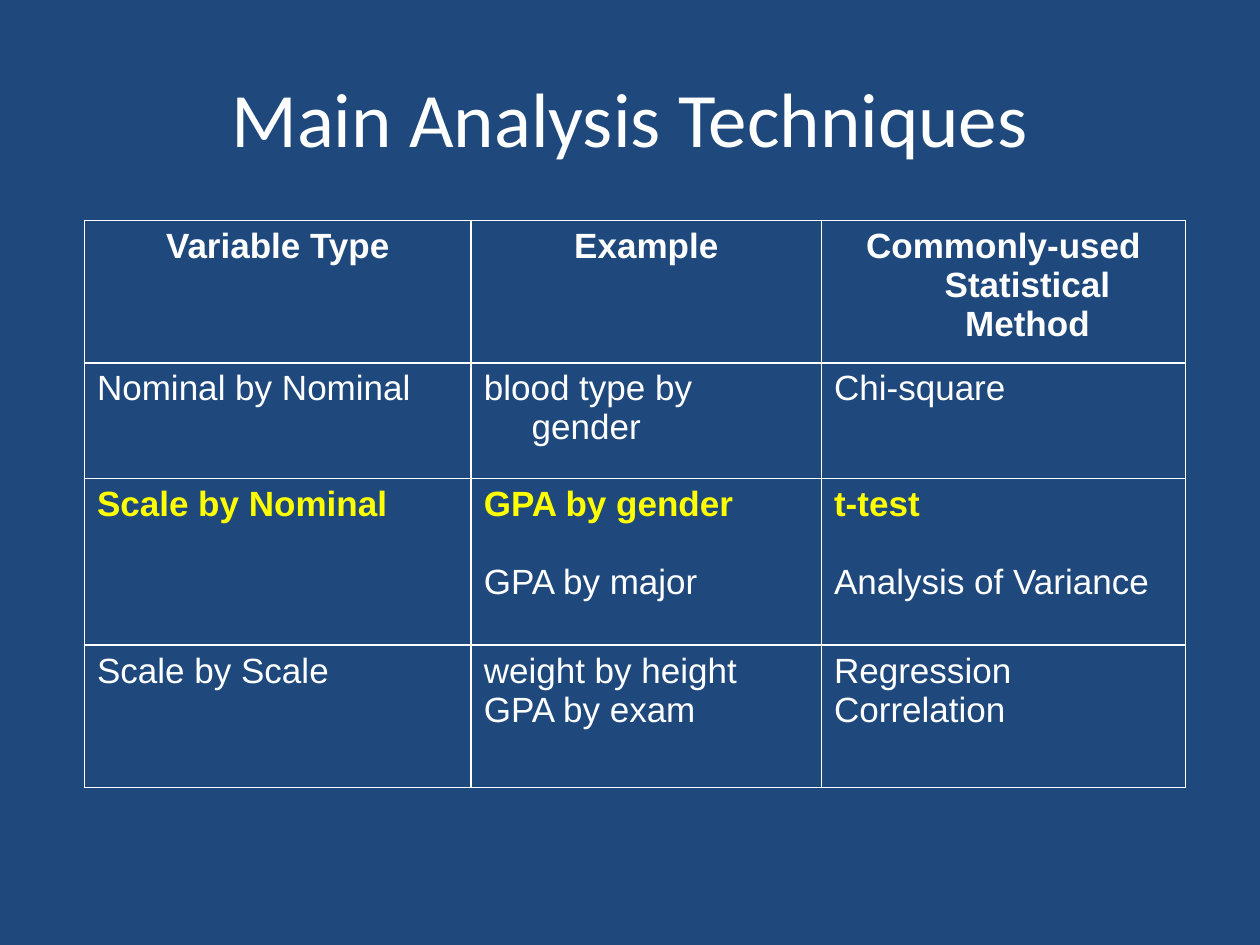
from dataclasses import dataclass

from lxml.etree import SubElement
from pptx import Presentation
from pptx.dml.color import RGBColor
from pptx.enum.text import MSO_ANCHOR, PP_ALIGN
from pptx.oxml.ns import qn
from pptx.util import Inches, Pt


@dataclass(frozen=True)
class Theme:
    background: RGBColor = RGBColor(0x1F, 0x49, 0x7D)
    text: RGBColor = RGBColor(0xFF, 0xFF, 0xFF)
    highlight: RGBColor = RGBColor(0xFF, 0xFF, 0x00)
    title_font: str = "Calibri"
    table_font: str = "Arial"
    title_size: Pt = Pt(44)
    table_size: Pt = Pt(20)
    paragraph_gap: Pt = Pt(22)
    border: Pt = Pt(1)


@dataclass(frozen=True)
class Line:
    text: str
    header: bool = False
    highlight: bool = False
    gap: bool = False


THEME = Theme()
COLUMN_WIDTHS = (3.07, 2.78, 2.89)
ROW_HEIGHTS = (1.13, 0.92, 1.32, 1.13)
ROWS = (
    tuple((Line(text, header=True),) for text in
          ("Variable Type", "Example", "Commonly-used Statistical Method")),
    ((Line("Nominal by Nominal"),), (Line("blood type by gender"),), (Line("Chi-square"),)),
    (
        (Line("Scale by Nominal", highlight=True),),
        (Line("GPA by gender", highlight=True), Line("GPA by major", gap=True)),
        (Line("t-test", highlight=True), Line("Analysis of Variance", gap=True)),
    ),
    (
        (Line("Scale by Scale"),),
        (Line("weight by height"), Line("GPA by exam")),
        (Line("Regression"), Line("Correlation")),
    ),
)


def add_run(p, text: str, font: str, size: Pt, color: RGBColor, bold: bool = False) -> None:
    r = p.add_run()
    r.text = text
    r.font.name = font
    r.font.size = size
    r.font.bold = bold
    r.font.color.rgb = color


def add_title(s, text: str) -> None:
    sp = s.shapes.add_textbox(Inches(0.5), Inches(0.3), Inches(9), Inches(1.25))
    tf = sp.text_frame
    tf.word_wrap = True
    tf.vertical_anchor = MSO_ANCHOR.MIDDLE
    p = tf.paragraphs[0]
    p.alignment = PP_ALIGN.CENTER
    add_run(p, text, THEME.title_font, THEME.title_size, THEME.text)


def set_borders(cell) -> None:
    tc_pr = cell._tc.get_or_add_tcPr()
    for side in ("a:lnL", "a:lnR", "a:lnT", "a:lnB"):
        ln = SubElement(tc_pr, qn(side), w=str(int(THEME.border)))
        fill = SubElement(ln, qn("a:solidFill"))
        SubElement(fill, qn("a:srgbClr"), val=str(THEME.text))


def fill_cell(cell, lines: tuple[Line, ...]) -> None:
    set_borders(cell)
    cell.fill.background()
    tf = cell.text_frame
    for i, line in enumerate(lines):
        p = tf.add_paragraph() if i else tf.paragraphs[0]
        p.alignment = PP_ALIGN.CENTER if line.header else PP_ALIGN.LEFT
        if line.gap:
            p.space_before = THEME.paragraph_gap
        p_pr = p._p.get_or_add_pPr()
        p_pr.set("marL", str(Inches(0.38)))
        p_pr.set("indent", str(-Inches(0.38)))
        add_run(p, line.text, THEME.table_font, THEME.table_size,
                THEME.highlight if line.highlight else THEME.text,
                line.header or line.highlight)


def add_techniques_table(s) -> None:
    frame = s.shapes.add_table(
        len(ROWS), len(COLUMN_WIDTHS), Inches(0.67), Inches(1.75),
        Inches(sum(COLUMN_WIDTHS)), Inches(sum(ROW_HEIGHTS)))
    table = frame.table
    table.first_row = table.horz_banding = False
    for column, width in zip(table.columns, COLUMN_WIDTHS):
        column.width = Inches(width)
    for row, height, contents in zip(table.rows, ROW_HEIGHTS, ROWS):
        row.height = Inches(height)
        for cell, lines in zip(row.cells, contents):
            fill_cell(cell, lines)


def main() -> None:
    prs = Presentation()
    prs.slide_width, prs.slide_height = Inches(10), Inches(7.5)
    s = prs.slides.add_slide(prs.slide_layouts[6])
    s.background.fill.solid()
    s.background.fill.fore_color.rgb = THEME.background
    add_techniques_table(s)
    add_title(s, "Main Analysis Techniques")
    prs.save("out.pptx")


if __name__ == "__main__":
    main()
